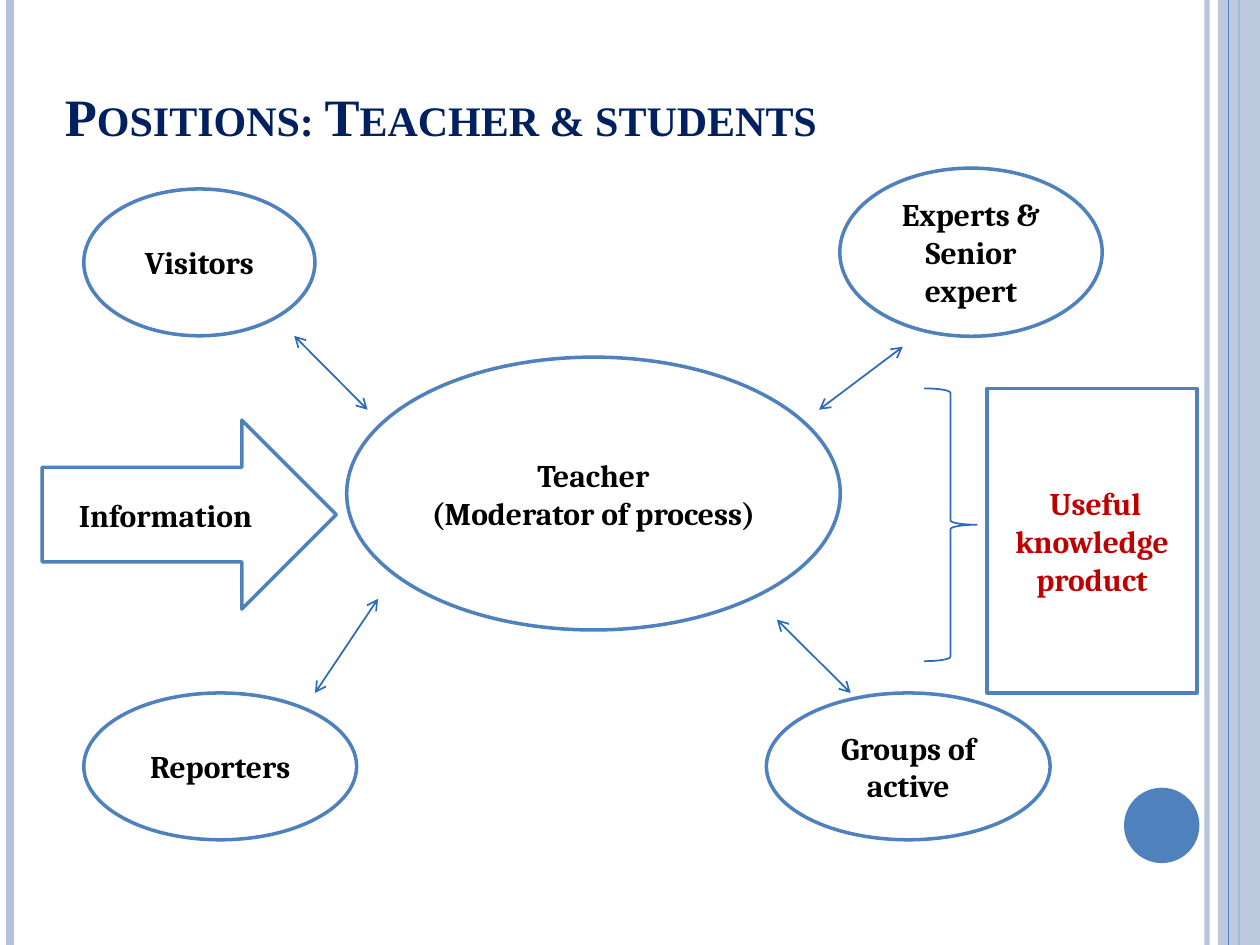
from lxml import etree
from pptx import Presentation
from pptx.dml.color import RGBColor
from pptx.enum.shapes import MSO_CONNECTOR, MSO_SHAPE
from pptx.enum.text import MSO_ANCHOR, PP_ALIGN
from pptx.oxml.ns import qn
from pptx.util import Cm, Pt

OVAL = MSO_SHAPE.OVAL
RECT = MSO_SHAPE.RECTANGLE
ARROW = MSO_SHAPE.RIGHT_ARROW
BRACE = MSO_SHAPE.RIGHT_BRACE
STRAIGHT = MSO_CONNECTOR.STRAIGHT
MIDDLE, BOTTOM = MSO_ANCHOR.MIDDLE, MSO_ANCHOR.BOTTOM
LEFT, CENTER = PP_ALIGN.LEFT, PP_ALIGN.CENTER

BLUE, PALE, LINK = "4F81BD", "B3C1DB", "2C6CB9"
WHITE, BLACK, RED, NAVY = "FFFFFF", "000000", "C00000", "002060"
WIDTH, HEIGHT = 25.4, 19.05

TITLE = "Positions: Teacher & students"
STRIPES = [
    (24.33, PALE, 3, 93),
    (0.2, PALE, 4.5, 100),
    (24.98, BLUE, 1.5, 100),
]
BAND = (24.55, 0, 0.85, HEIGHT)
BAND_STRIPE = (24.77, BLUE, 0.75, 100)
DOT = (22.66, 15.88, 1.52, 1.52)
BRACE_BOX = (18.63, 7.83, 1.06, 5.5)
LINKS = [
    (7.41, 6.77, 5.93, 6.77 - 1.48),
    (16.51, 8.26, 18.2, 6.99),
    (6.35, 13.97, 7.62, 12.07),
    (17.15, 13.97, 15.66, 12.49),
]
LINKS[0] = (7.41, 8.26, 5.93, 6.77)
NODES = [
    (OVAL, (6.99, 7.2, 9.95, 5.5), "Teacher\n(Moderator of process)", BLACK),
    (OVAL, (1.69, 13.97, 5.5, 2.96), "Reporters", BLACK),
    (OVAL, (1.69, 3.81, 4.66, 2.96), "Visitors", BLACK),
    (OVAL, (15.45, 13.97, 5.72, 2.96), "Groups of active", BLACK),
    (OVAL, (16.93, 3.39, 5.29, 3.39), "Experts &\nSenior expert", BLACK),
    (RECT, (19.9, 7.83, 4.23, 6.14), " Useful knowledge product", RED),
    (ARROW, (0.85, 8.47, 5.93, 3.81), "Information", BLACK),
]


def rgb(value):
    return RGBColor.from_string(value)


def set_alpha(fill, percent):
    color = fill._xPr.find(qn("a:solidFill"))[0]
    etree.SubElement(color, qn("a:alpha"), val=str(percent * 1000))


def add_line(slide, ends, color, width, alpha=100, arrows=False):
    s = slide.shapes.add_connector(STRAIGHT, *map(Cm, ends))
    s.line.color.rgb = rgb(color)
    s.line.width = Pt(width)
    if alpha < 100:
        set_alpha(s.line.fill, alpha)
    if arrows:
        ln = s.line._get_or_add_ln()
        for tag in ("a:headEnd", "a:tailEnd"):
            etree.SubElement(ln, qn(tag), type="arrow")
    etree.SubElement(s._element.spPr, qn("a:effectLst"))


def add_stripe(slide, x, color, width, alpha):
    add_line(slide, (x, 0, x, HEIGHT), color, width, alpha)


def add_shape(slide, kind, box, fill=None, line=None, width=2):
    s = slide.shapes.add_shape(kind, *map(Cm, box))
    s.shadow.inherit = False
    if fill:
        s.fill.solid()
        s.fill.fore_color.rgb = rgb(fill)
    else:
        s.fill.background()
    if line:
        s.line.color.rgb = rgb(line)
        s.line.width = Pt(width)
    else:
        s.line.fill.background()
    return s


def set_text(s, text, font, size, color, align, anchor):
    tf = s.text_frame
    tf.word_wrap = True
    tf.vertical_anchor = anchor
    tf.text = text
    for p in tf.paragraphs:
        p.alignment = align
        for r in p.runs:
            r.font.name = font
            r.font.size = Pt(size)
            r.font.bold = True
            r.font.color.rgb = rgb(color)
    return tf


def main():
    prs = Presentation()
    prs.slide_width, prs.slide_height = Cm(WIDTH), Cm(HEIGHT)
    slide = prs.slides.add_slide(prs.slide_layouts[6])

    for stripe in STRIPES:
        add_stripe(slide, *stripe)
    band = add_shape(slide, RECT, BAND, PALE)
    set_alpha(band.fill, 87)
    add_stripe(slide, *BAND_STRIPE)
    add_shape(slide, OVAL, DOT, BLUE)

    title = slide.shapes.add_textbox(Cm(1.06), Cm(1.27), Cm(20.74), Cm(1.82))
    tf = set_text(title, TITLE, "Times New Roman", 30, NAVY, LEFT, BOTTOM)
    tf.paragraphs[0].runs[0].font._element.set("cap", "small")

    for ends in LINKS:
        add_line(slide, ends, LINK, 1, arrows=True)
    add_shape(slide, BRACE, BRACE_BOX, line=LINK, width=1)
    for kind, box, text, color in NODES:
        s = add_shape(slide, kind, box, WHITE, BLUE)
        set_text(s, text, "Cambria", 18, color, CENTER, MIDDLE)

    prs.save("out.pptx")


if __name__ == "__main__":
    main()
